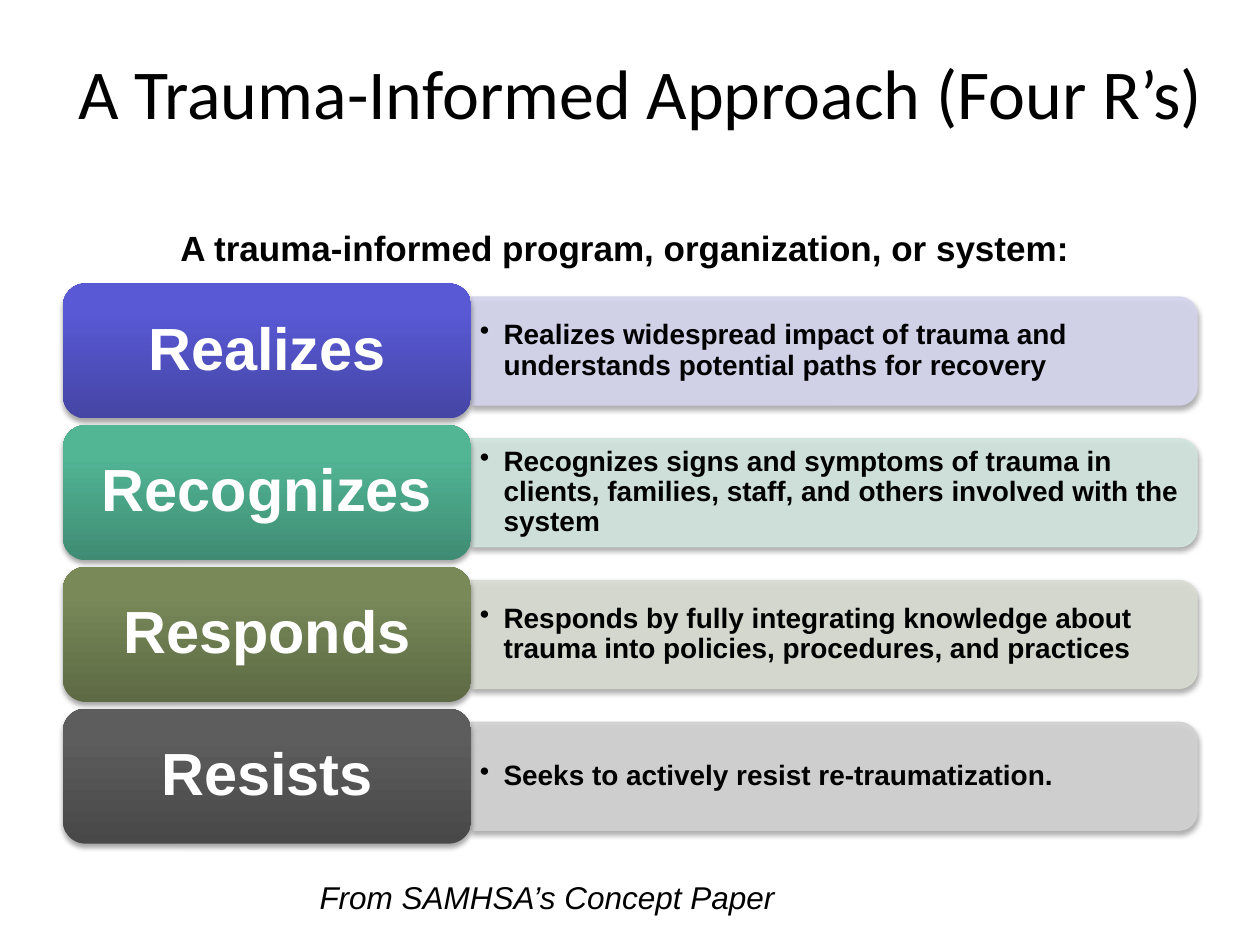
from copy import deepcopy
from dataclasses import dataclass

from lxml.etree import SubElement
from pptx import Presentation
from pptx.dml.color import RGBColor
from pptx.enum.shapes import MSO_SHAPE
from pptx.enum.text import MSO_ANCHOR, PP_ALIGN
from pptx.oxml.ns import qn
from pptx.util import Pt


@dataclass(frozen=True)
class Theme:
    """Colours, fonts and type sizes of the slide."""
    ink: str = "000000"
    label_ink: str = "FFFFFF"
    heading_font: str = "Calibri"
    body_font: str = "Arial"
    title: int = 40
    label: int = 34
    intro: int = 20
    credit: int = 18
    detail: int = 16


@dataclass(frozen=True)
class Principle:
    """One of the four R's with its gradient and panel colours."""
    label: str
    detail: str
    gradient: tuple
    tint: str


THEME = Theme()
PRINCIPLES = [
    Principle("Realizes",
              "Realizes widespread impact of trauma and understands potential paths for recovery",
              ("4545A5", "5959D6", "5757D9"), "D4D4ED"),
    Principle("Recognizes",
              "Recognizes signs and symptoms of trauma in clients, families, staff, "
              "and others involved with the system",
              ("3F8C73", "52B695", "50B996"), "D2E5DF"),
    Principle("Responds",
              "Responds by fully integrating knowledge about trauma into policies, "
              "procedures, and practices",
              ("5D6A44", "798958", "7A8B58"), "D9DCD2"),
    Principle("Resists", "Seeks to actively resist re-traumatization.",
              ("484848", "5D5D5D", "5D5D5D"), "D2D2D2"),
]


def set_insets(frame, horizontal, vertical):
    """Set equal side insets and equal top and bottom insets."""
    frame.margin_left = frame.margin_right = Pt(horizontal)
    frame.margin_top = frame.margin_bottom = Pt(vertical)


def write(frame, text, size, color=THEME.ink, font=THEME.body_font, bold=False,
          italic=False, align=PP_ALIGN.LEFT, anchor=MSO_ANCHOR.TOP):
    """Write one styled run into a frame and return its paragraph."""
    frame.word_wrap = True
    frame.vertical_anchor = anchor
    paragraph = frame.paragraphs[0]
    paragraph.alignment = align
    run = paragraph.add_run()
    run.text = text
    run.font.size = Pt(size)
    run.font.name = font
    run.font.bold = bold
    run.font.italic = italic
    run.font.color.rgb = RGBColor.from_string(color)
    return paragraph


def add_text(slide, box, text, size, **style):
    """Place a line of text in the given box."""
    frame = slide.shapes.add_textbox(*map(Pt, box)).text_frame
    return write(frame, text, size, **style)


def add_shadow(shape):
    """Give a shape a soft shadow falling straight down."""
    shape.shadow.inherit = False
    effects = shape._element.spPr.find(qn("a:effectLst"))
    outer = SubElement(effects, qn("a:outerShdw"), blurRad=str(Pt(3.1)),
                       dist=str(Pt(1.8)), dir="5400000", rotWithShape="0")
    black = SubElement(outer, qn("a:srgbClr"), val=THEME.ink)
    SubElement(black, qn("a:alpha"), val="35000")


def fill_gradient(shape, colors):
    """Fill a shape with a three-stop gradient rising from the bottom."""
    shape.fill.gradient()
    shape.fill.gradient_angle = 90
    stop_list = shape._element.spPr.find(".//" + qn("a:gsLst"))
    stop_list.append(deepcopy(stop_list[-1]))
    for stop, color, position in zip(shape.fill.gradient_stops, colors, (0, 0.8, 1)):
        stop.color.rgb = RGBColor.from_string(color)
        stop.position = position


def add_panel(slide, box, principle):
    """Draw the tinted panel, rounded on its right side, with its bullet."""
    left, top, width, height = box
    upright = (left + (width - height) / 2, top + (height - width) / 2, height, width)
    panel = slide.shapes.add_shape(MSO_SHAPE.ROUND_2_SAME_RECTANGLE, *map(Pt, upright))
    panel.rotation = 90
    panel.fill.solid()
    panel.fill.fore_color.rgb = RGBColor.from_string(principle.tint)
    panel.line.color.rgb = RGBColor.from_string(principle.tint)
    panel.line.width = Pt(0.75)
    for color in panel._element.spPr.iter(qn("a:srgbClr")):
        SubElement(color, qn("a:alpha"), val="90000")
    add_shadow(panel)

    frame = slide.shapes.add_textbox(*map(Pt, (left, top + 3, width - 3, height - 6))).text_frame
    set_insets(frame, 5, 2.5)
    bullet = write(frame, principle.detail, THEME.detail, bold=True, anchor=MSO_ANCHOR.MIDDLE)
    bullet.level = 1
    bullet.line_spacing = 0.9
    properties = bullet._p.get_or_add_pPr()
    properties.set("marL", str(Pt(13.5)))
    properties.set("indent", str(Pt(-13.5)))
    SubElement(properties, qn("a:buChar"), char="•")


def add_label(slide, box, principle):
    """Draw the gradient block that names a principle."""
    block = slide.shapes.add_shape(MSO_SHAPE.ROUNDED_RECTANGLE, *map(Pt, box))
    fill_gradient(block, principle.gradient)
    block.line.fill.background()
    add_shadow(block)
    set_insets(block.text_frame, 10, 5)
    name = write(block.text_frame, principle.label, THEME.label, color=THEME.label_ink,
                 bold=True, align=PP_ALIGN.CENTER, anchor=MSO_ANCHOR.MIDDLE)
    name.line_spacing = 0.9


def add_principles(slide, box):
    """Stack the principles in equal rows, each a label beside a panel."""
    left, top, width, height = box
    gap = 3.86
    row_height = (height - gap * (len(PRINCIPLES) - 1)) / len(PRINCIPLES)
    label_width = width * 0.36
    panel_height = row_height * 0.8
    for row, principle in enumerate(PRINCIPLES):
        row_top = top + row * (row_height + gap)
        panel_top = row_top + (row_height - panel_height) / 2
        add_panel(slide, (left + label_width, panel_top, width - label_width, panel_height),
                  principle)
        add_label(slide, (left, row_top, label_width, row_height), principle)


def main():
    """Build and save the slide."""
    deck = Presentation()
    deck.slide_width, deck.slide_height = Pt(720), Pt(540)
    slide = deck.slides.add_slide(deck.slide_layouts[6])
    add_text(slide, (30, 21.6, 672, 61.2), "A Trauma-Informed Approach (Four R’s)", THEME.title,
             font=THEME.heading_font, align=PP_ALIGN.CENTER, anchor=MSO_ANCHOR.MIDDLE)
    add_principles(slide, (36, 162, 648, 320.1))
    add_text(slide, (36, 126, 648, 53), "A trauma-informed program, organization, or system: ",
             THEME.intro, bold=True, align=PP_ALIGN.CENTER)
    add_text(slide, (175.5, 498, 306, 42), "From SAMHSA’s Concept Paper", THEME.credit,
             italic=True)
    deck.save("out.pptx")


if __name__ == "__main__":
    main()
